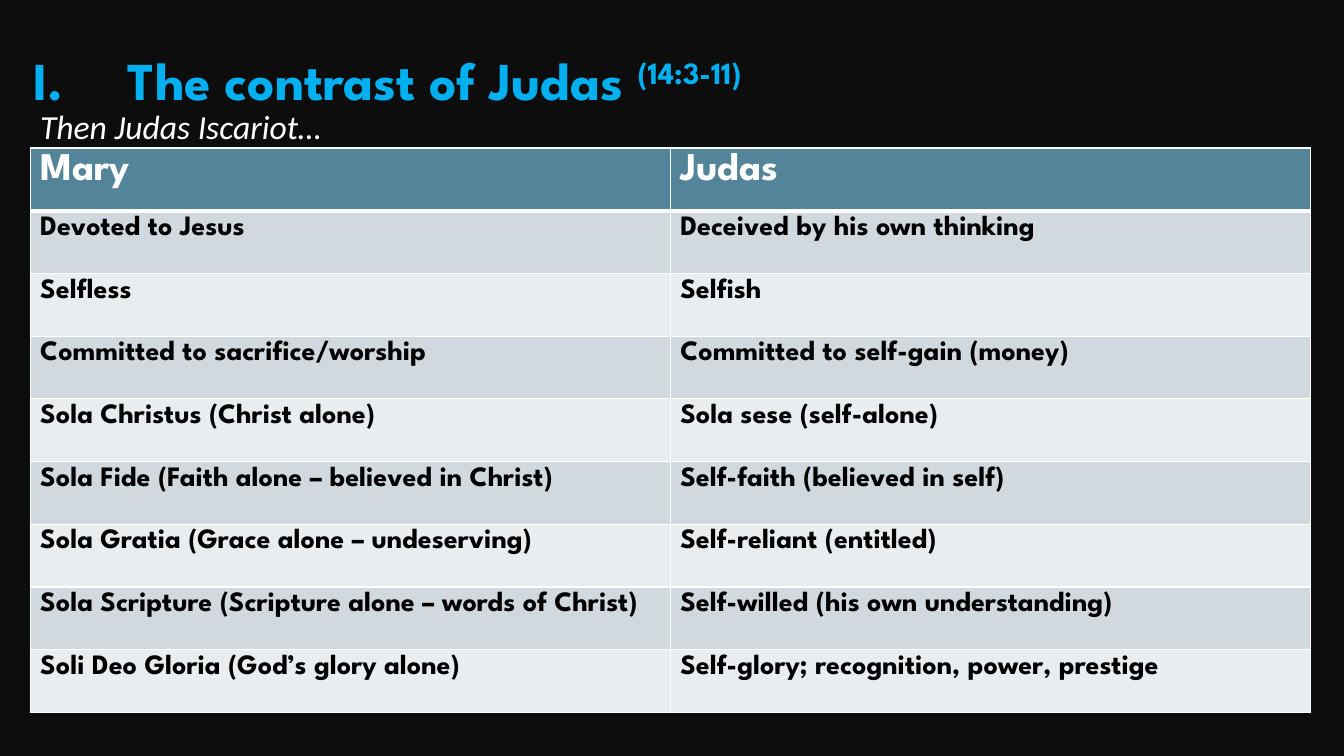
import pptx
import pptx.util
import pptx.dml.color
import pptx.enum.text
import pptx.oxml
import pptx.oxml.ns
from pptx.util import Cm

COLORS = {"back": "0D0D0D", "title": "00B0F0", "white": "FFFFFF", "black": "000000",
          "header": "54849A", "odd": "D1D9DE", "even": "E9EDEF"}
HEADING_FONT = "League Spartan"
NS = pptx.oxml.ns.nsdecls("a")
ROWS = [
    ("Mary", "Judas"),
    ("Devoted to Jesus", "Deceived by his own thinking"),
    ("Selfless", "Selfish"),
    ("Committed to sacrifice/worship", "Committed to self-gain (money)"),
    ("Sola Christus (Christ alone)", "Sola sese (self-alone)"),
    ("Sola Fide (Faith alone – believed in Christ)", "Self-faith (believed in self)"),
    ("Sola Gratia (Grace alone – undeserving)", "Self-reliant (entitled)"),
    ("Sola Scripture (Scripture alone – words of Christ)", "Self-willed (his own understanding)"),
    ("Soli Deo Gloria (God’s glory alone)", "Self-glory; recognition, power, prestige"),
]


def rgb(name):
    return pptx.dml.color.RGBColor.from_string(COLORS[name])


def style(r, font, size, color, bold=False, italic=False):
    r.font.name = font
    r.font.size = pptx.util.Pt(size)
    r.font.bold = bold
    r.font.italic = italic
    r.font.color.rgb = rgb(color)


prs = pptx.Presentation()
prs.slide_width = Cm(33.87)
prs.slide_height = Cm(19.05)
s = prs.slides.add_slide(prs.slide_layouts[5])
s.background.fill.solid()
s.background.fill.fore_color.rgb = rgb("back")

title = s.shapes.title
title.left, title.top, title.width, title.height = Cm(0.58), Cm(0.71), Cm(32.46), Cm(2.39)
tf = title.text_frame
tf.auto_size = pptx.enum.text.MSO_AUTO_SIZE.NONE
tf.vertical_anchor = pptx.enum.text.MSO_ANCHOR.TOP
tf.margin_top = Cm(0.48)
p = tf.paragraphs[0]
p.text = "The contrast of Judas "
p.alignment = pptx.enum.text.PP_ALIGN.JUSTIFY
pPr = p._p.get_or_add_pPr()
pPr.set("marL", str(Cm(2.39)))
pPr.set("indent", str(-Cm(2.39)))
for xml in (f'<a:buClr {NS}><a:srgbClr val="{COLORS["title"]}"/></a:buClr>',
            f'<a:buFont {NS} typeface="{HEADING_FONT}"/>',
            f'<a:buAutoNum {NS} type="romanUcPeriod"/>'):
    pPr.append(pptx.oxml.parse_xml(xml))
verses = p.add_run()
verses.text = "(14:3-11)"
for r in p.runs:
    style(r, HEADING_FONT, 38, "title", bold=True)
verses.font._element.set("baseline", "30000")

sp = s.shapes.add_textbox(Cm(0.76), Cm(2.54), Cm(32.2), Cm(1.27))
tf = sp.text_frame
tf.word_wrap = True
p = tf.paragraphs[0]
p.text = "Then Judas Iscariot…"
p.alignment = pptx.enum.text.PP_ALIGN.JUSTIFY
style(p.runs[0], "Calibri", 24, "white", italic=True)

row_height = Cm(1.58)
table = s.shapes.add_table(len(ROWS), 2, Cm(0.76), Cm(3.73), Cm(32.26),
                           row_height * len(ROWS)).table
for i, texts in enumerate(ROWS):
    table.rows[i].height = row_height
    fill = "header" if i == 0 else "odd" if i % 2 else "even"
    widths = {"lnL": 1, "lnR": 1, "lnT": 3 if i == 1 else 1, "lnB": 3 if i == 0 else 1}
    for j, text in enumerate(texts):
        cell = table.cell(i, j)
        tcPr = cell._tc.get_or_add_tcPr()
        for side, width in widths.items():
            tcPr.append(pptx.oxml.parse_xml(
                f'<a:{side} {NS} w="{pptx.util.Pt(width)}"><a:solidFill>'
                f'<a:srgbClr val="{COLORS["white"]}"/></a:solidFill></a:{side}>'))
        cell.fill.solid()
        cell.fill.fore_color.rgb = rgb(fill)
        cell.text_frame.text = text
        r = cell.text_frame.paragraphs[0].runs[0]
        style(r, HEADING_FONT, 20 if i else 28, "black" if i else "white", bold=True)

prs.save("out.pptx")
